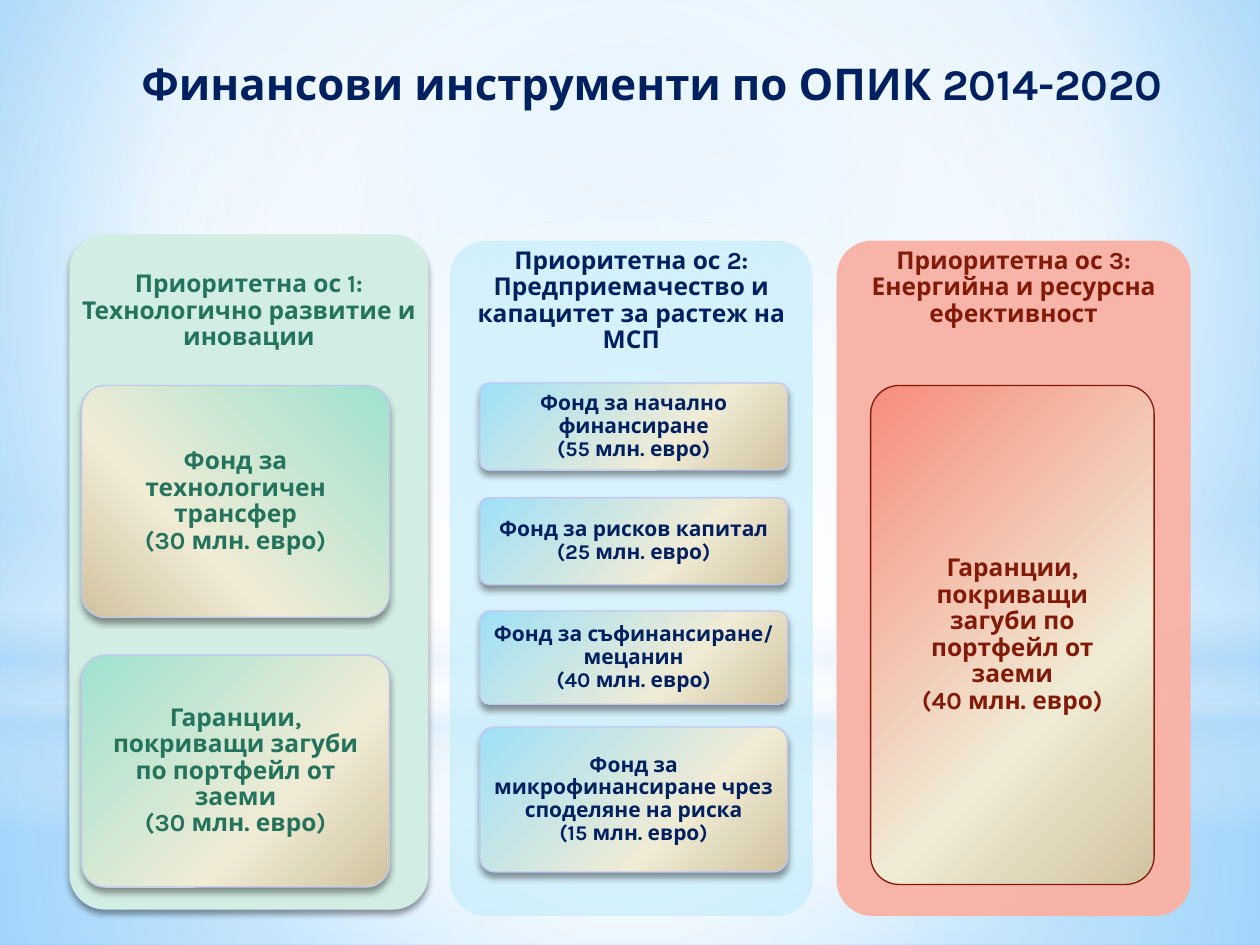
from copy import deepcopy

from lxml.etree import SubElement
from pptx import Presentation
from pptx.dml.color import RGBColor
from pptx.enum.shapes import MSO_SHAPE as Shape
from pptx.enum.text import MSO_ANCHOR as Anchor, MSO_AUTO_SIZE as AutoSize, PP_ALIGN as Align
from pptx.oxml.ns import qn
from pptx.util import Inches, Pt

WHITE = RGBColor(0xFF, 0xFF, 0xFF)
BLACK = RGBColor(0, 0, 0)
SKY = RGBColor(0xB4, 0xDC, 0xFA)
SKY_LIGHT = RGBColor(0x9E, 0xD5, 0xFF)
SKY_DEEP = RGBColor(0x5B, 0xB9, 0xFF)
NAVY = RGBColor(0x00, 0x20, 0x60)
GREEN = RGBColor(0x23, 0x73, 0x5D)
GREEN_PALE = RGBColor(0xD2, 0xED, 0xE3)
MINT = RGBColor(0x9E, 0xE2, 0xCF)
CYAN = RGBColor(0x9E, 0xE0, 0xF8)
CYAN_PALE = RGBColor(0xBF, 0xEB, 0xFA)
RED = RGBColor(0x82, 0x1A, 0x08)
RED_PALE = RGBColor(0xF9, 0xB3, 0xA7)
CORAL = RGBColor(0xF7, 0x8D, 0x7C)
CREAM = RGBColor(0xF0, 0xEB, 0xD5)
SAND = RGBColor(0xD1, 0xC3, 0x9F)
LILAC = RGBColor(0xC1, 0xC7, 0xF2)

FONT = "Karla"
TITLE = "Финансови инструменти по ОПИК 2014-2020"
CENTRE = (50, 50, 50, 50)

# Gradient stops: position %, colour, opacity %
PAGE_STOPS = [(0, SKY_LIGHT, 100), (60, WHITE, 100), (100, SKY_DEEP, 100)]
BACKDROP = [
    (Shape.RECTANGLE, (0, 5.58, 10, 1.92),
     [(0, WHITE, 91), (37, WHITE, 76), (100, SKY, 79)], {"focus": CENTRE}),
    (Shape.RECTANGLE, (0, 0, 10, 5.58),
     [(0, WHITE, 89), (48, WHITE, 62), (100, SKY, 79)], {"focus": CENTRE}),
    (Shape.RECTANGLE, (0, 4.12, 10, 2.5),
     [(0, WHITE, 0), (29, WHITE, 30), (45, SKY, 40), (55, WHITE, 26),
      (65, SKY, 60), (100, WHITE, 0)], {"angle": 90}),
    (Shape.OVAL, (0, 1.75, 10, 5.58),
     [(0, WHITE, 100), (56, WHITE, 0)], {"focus": CENTRE}),
]

HEADING_HEIGHT = 1.61
PANEL_HEIGHT = 5.36
# Cards: top, height, gradient angle, text
AXES = [
    {"left": 0.55, "top": 1.86, "width": 2.85, "fill": GREEN_PALE, "opacity": 100,
     "shadow": True, "ink": GREEN, "anchor": Anchor.MIDDLE, "insets": (0.06, 0, 0.06, 0.39),
     "heading": "Приоритетна ос 1:\nТехнологично развитие и иновации",
     "card_left": 0.65, "card_width": 2.44, "tint": MINT, "edge": LILAC,
     "card_shadow": True, "size": 14, "card_inset": 0.1,
     "cards": [
         (3.06, 1.84, 135, "Фонд за технологичен трансфер\n(30 млн. евро)"),
         (5.2, 1.84, 45, "Гаранции, покриващи загуби по портфейл от заеми\n(30 млн. евро)")]},
    {"left": 3.57, "top": 1.91, "width": 2.88, "fill": CYAN_PALE, "opacity": 60,
     "shadow": False, "ink": NAVY, "anchor": Anchor.TOP, "insets": (0.06,) * 4,
     "heading": "Приоритетна ос 2:\nПредприемачество и капацитет за растеж на МСП",
     "card_left": 3.81, "card_width": 2.44, "tint": CYAN, "edge": LILAC,
     "card_shadow": True, "size": 12, "card_inset": 0.05,
     "cards": [
         (3.04, 0.69, 45, "Фонд за начално финансиране\n(55 млн. евро)"),
         (3.95, 0.69, 45, "Фонд за рисков капитал (25 млн. евро)"),
         (4.85, 0.74, 45, "Фонд за съфинансиране/\nмецанин\n(40 млн. евро)"),
         (5.77, 1.15, 45,
          "Фонд за микрофинансиране чрез споделяне на риска\n(15 млн. евро)")]},
    {"left": 6.64, "top": 1.91, "width": 2.81, "fill": RED_PALE, "opacity": 98,
     "shadow": False, "ink": RED, "anchor": Anchor.TOP, "insets": (0.06,) * 4,
     "heading": "Приоритетна ос 3:\nЕнергийна и ресурсна ефективност",
     "card_left": 6.91, "card_width": 2.25, "tint": CORAL, "edge": RED,
     "card_shadow": False, "size": 14, "card_inset": 0.1,
     "cards": [
         (3.06, 3.96, 45, "Гаранции, покриващи загуби по портфейл от заеми\n(40 млн. евро)")]},
]


def add_colour(parent, colour, opacity):
    node = SubElement(parent, qn("a:srgbClr"), val=str(colour))
    if opacity < 100:
        SubElement(node, qn("a:alpha"), val=str(opacity * 1000))


def set_gradient(fill, holder, stops, angle=0, focus=None):
    """Fill with stops along an angle, or outward from a focus rectangle."""
    fill.solid()
    solid = holder.find(qn("a:solidFill"))
    solid.clear()
    gradient = SubElement(solid, qn("a:gradFill"), rotWithShape="1")
    stop_list = SubElement(gradient, qn("a:gsLst"))
    for position, colour, opacity in stops:
        stop = SubElement(stop_list, qn("a:gs"), pos=str(position * 1000))
        add_colour(stop, colour, opacity)
    if focus:
        course = SubElement(gradient, qn("a:path"), {"path": "circle"})
        sides = {side: str(value * 1000) for side, value in zip("ltrb", focus)}
        SubElement(course, qn("a:fillToRect"), sides)
    else:
        SubElement(gradient, qn("a:lin"), ang=str(angle * 60000), scaled="0")
    holder.replace(solid, gradient)


def add_plain_shape(page, kind, area, shadow=False):
    shape = page.shapes.add_shape(kind, *map(Inches, area))
    shape.line.fill.background()
    shape.shadow.inherit = False
    if kind == Shape.ROUNDED_RECTANGLE:
        shape.adjustments[0] = 0.1
    if shadow:
        effects = shape._element.spPr.find(qn("a:effectLst"))
        cast = SubElement(effects, qn("a:outerShdw"), blurRad=str(Pt(4)), dist=str(Pt(3)),
                          dir=str(90 * 60000), rotWithShape="0")
        add_colour(cast, BLACK, 40)
    return shape


def write(shape, text, size, ink, anchor, insets, spacing=0.9):
    frame = shape.text_frame
    sides = ("margin_left", "margin_top", "margin_right", "margin_bottom")
    layout = {"word_wrap": True, "auto_size": AutoSize.NONE, "vertical_anchor": anchor}
    layout.update(zip(sides, map(Inches, insets)))
    for name, value in layout.items():
        setattr(frame, name, value)
    para = frame.paragraphs[0]
    para.text = text
    para.alignment = Align.CENTER
    para.line_spacing = spacing
    for span in para.runs:
        for name, value in {"name": FONT, "size": Pt(size), "bold": True}.items():
            setattr(span.font, name, value)
        span.font.color.rgb = ink
    for line_break in para._p.findall(qn("a:br")):
        line_break.append(deepcopy(para.runs[0]._r.rPr))


def add_axis(page, axis):
    place = (axis["left"], axis["top"], axis["width"])
    panel = add_plain_shape(page, Shape.ROUNDED_RECTANGLE, (*place, PANEL_HEIGHT), axis["shadow"])
    panel.fill.solid()
    solid = panel._element.spPr.find(qn("a:solidFill"))
    solid.clear()
    add_colour(solid, axis["fill"], axis["opacity"])

    heading = page.shapes.add_textbox(*map(Inches, (*place, HEADING_HEIGHT)))
    write(heading, axis["heading"], 14, axis["ink"], axis["anchor"], axis["insets"])

    stops = [(0, axis["tint"], 100), (65, CREAM, 100), (100, SAND, 100)]
    for top, height, angle, text in axis["cards"]:
        area = (axis["card_left"], top, axis["card_width"], height)
        card = add_plain_shape(page, Shape.ROUNDED_RECTANGLE, area, axis["card_shadow"])
        set_gradient(card.fill, card._element.spPr, stops, angle)
        card.line.color.rgb = axis["edge"]
        card.line.width = Pt(0.75)
        write(card, text, axis["size"], axis["ink"], Anchor.MIDDLE, (axis["card_inset"],) * 4)


def main():
    deck = Presentation()
    deck.slide_width, deck.slide_height = Inches(10), Inches(7.5)
    page = deck.slides.add_slide(deck.slide_layouts[5])

    page_fill = page.background.fill
    page_fill.solid()
    holder = page._element.cSld.bg.bgPr
    set_gradient(page_fill, holder, PAGE_STOPS, focus=(20, 10, 20, 60))
    for kind, area, stops, course in BACKDROP:
        shape = add_plain_shape(page, kind, area)
        set_gradient(shape.fill, shape._element.spPr, stops, **course)

    title = page.shapes.title
    page.shapes._spTree.append(title._element)
    for name, value in zip(("left", "top", "width", "height"), (0.5, 0, 9, 1.15)):
        setattr(title, name, Inches(value))
    write(title, TITLE, 25, NAVY, Anchor.TOP, (0.45, 0.45, 0.1, 0.05), spacing=1.0)

    for axis in AXES:
        add_axis(page, axis)
    deck.save("out.pptx")


if __name__ == "__main__":
    main()
